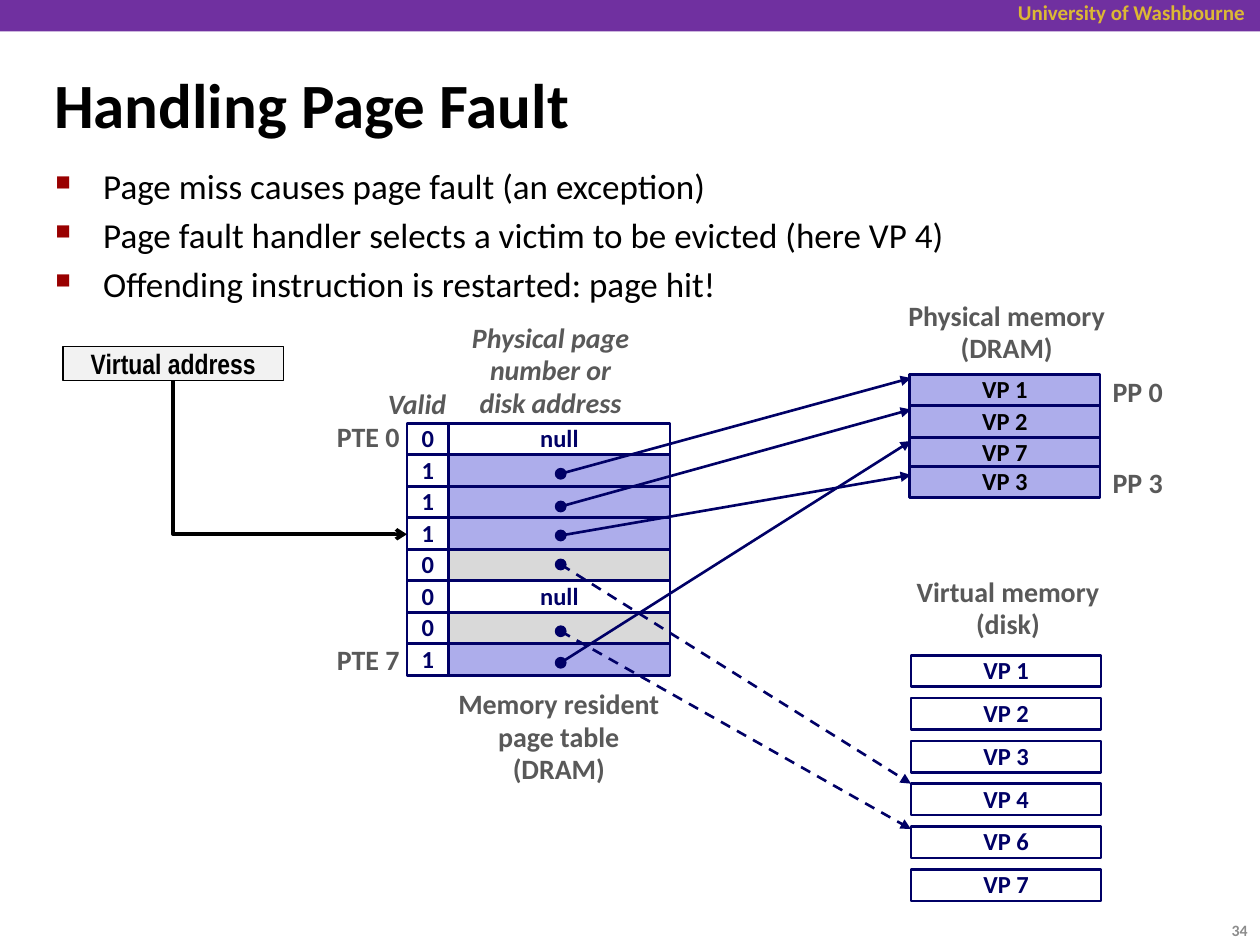
from lxml import etree
from pptx import Presentation
from pptx.dml.color import RGBColor
from pptx.enum.dml import MSO_LINE
from pptx.enum.shapes import MSO_CONNECTOR, MSO_SHAPE
from pptx.enum.text import MSO_ANCHOR, MSO_AUTO_SIZE, PP_ALIGN
from pptx.oxml.ns import qn
from pptx.util import Inches, Pt

NAVY, LILAC, GREY, WHITE, BLACK, LABEL = (
    "000066", "ADADEB", "D9D9D9", "FFFFFF", "000000", "595959")
CELL = {"size": 14, "color": NAVY, "bold": True}
CAPTION = {"size": 16, "color": LABEL, "bold": True}
ROW_H = 0.25


def rgb(value):
    return RGBColor.from_string(value)


def write(shape, lines, fmt, align=PP_ALIGN.CENTER, anchor=MSO_ANCHOR.MIDDLE,
          wrap=False, spacing=0.98):
    """Fill a shape with one paragraph per line, all in one format."""
    tf = shape.text_frame
    frame = {"auto_size": MSO_AUTO_SIZE.NONE, "word_wrap": wrap,
             "vertical_anchor": anchor}
    for name, value in frame.items():
        setattr(tf, name, value)
    font = {"name": "Calibri", **fmt}
    color, size = font.pop("color"), font.pop("size")
    for i, line in enumerate(lines):
        p = tf.paragraphs[0] if i == 0 else tf.add_paragraph()
        p.alignment, p.line_spacing = align, spacing
        r = p.add_run()
        r.text = line
        r.font.size, r.font.color.rgb = Pt(size), rgb(color)
        for name, value in font.items():
            setattr(r.font, name, value)
    return tf


def add_text(s, box, lines, fmt, **layout):
    return write(s.shapes.add_textbox(*map(Inches, box)), lines, fmt, **layout)


def add_box(s, box, fill, line=NAVY, width=1.5, kind=MSO_SHAPE.RECTANGLE):
    sp = s.shapes.add_shape(kind, *map(Inches, box))
    sp.shadow.inherit = False
    sp.fill.solid()
    sp.fill.fore_color.rgb = rgb(fill)
    if line:
        sp.line.color.rgb, sp.line.width = rgb(line), Pt(width)
    else:
        sp.line.fill.background()
    return sp


def add_arrow(s, ends, color=NAVY, width=1.5, dashed=False, head="triangle",
              kind=MSO_CONNECTOR.STRAIGHT):
    cx = s.shapes.add_connector(kind, *map(Inches, ends))
    cx.line.color.rgb, cx.line.width = rgb(color), Pt(width)
    if dashed:
        cx.line.dash_style = MSO_LINE.DASH
    etree.SubElement(cx.line._get_or_add_ln(), qn("a:tailEnd"), type=head)
    etree.SubElement(cx._element.spPr, qn("a:effectLst"))
    return cx


def add_header(s, box):
    left, top, width, height = box
    add_box(s, box, "7030A0", line=None)
    add_text(s, (left + width - 2.67, top - 0.05, 2.65, 0.3),
             ["University of Washbourne"],
             {"size": 12, "color": "DCB834", "bold": True},
             align=PP_ALIGN.RIGHT, anchor=MSO_ANCHOR.TOP, spacing=1)


def add_title(s, box, text):
    title = s.shapes.title
    title.left, title.top, title.width, title.height = map(Inches, box)
    write(title, [text], {"size": 36, "color": BLACK, "bold": True},
          align=PP_ALIGN.LEFT, wrap=True, spacing=1)


def add_bullets(s, box, lines):
    tf = add_text(s, box, lines, {"size": 20, "color": BLACK},
                  align=PP_ALIGN.LEFT, anchor=MSO_ANCHOR.TOP, wrap=True, spacing=1)
    for p in tf.paragraphs:
        p.space_before = Pt(4)
        pPr = p._p.get_or_add_pPr()
        pPr.set("marL", str(Inches(0.38)))
        pPr.set("indent", str(-Inches(0.38)))
        clr = etree.SubElement(pPr, qn("a:buClr"))
        etree.SubElement(clr, qn("a:srgbClr"), val="990000")
        etree.SubElement(pPr, qn("a:buSzPct"), val="60000")
        etree.SubElement(pPr, qn("a:buChar"), char="■")


def add_page_table(s, box):
    left, top, width, height = box
    valid_w = 0.33
    entries = [("0", WHITE), ("1", LILAC), ("1", LILAC), ("1", LILAC),
               ("0", GREY), ("0", WHITE), ("0", GREY), ("1", LILAC)]
    for i, (valid, fill) in enumerate(entries):
        y = top + i * ROW_H
        write(add_box(s, (left, y, valid_w, ROW_H), WHITE), [valid], CELL)
        entry = add_box(s, (left + valid_w, y, width - valid_w, ROW_H), fill)
        if fill == WHITE:
            write(entry, ["null"], CELL)
    # Headings, row labels and caption
    italic = {**CAPTION, "italic": True}
    add_text(s, (left - 0.25, top - 0.33, 0.75, 0.37), ["Valid"], italic,
             align=PP_ALIGN.LEFT, anchor=MSO_ANCHOR.TOP)
    add_text(s, (left + 0.41, top - 0.86, 1.46, 0.89),
             ["Physical page", "number or", "disk address"], italic)
    for label, y in (("PTE 0", top - 0.07), ("PTE 7", top + height - 0.3)):
        add_text(s, (left - 0.66, y, 0.7, 0.37), [label], CAPTION,
                 align=PP_ALIGN.RIGHT)
    add_text(s, (left + 0.28, top + height + 0.05, 1.85, 0.89),
             ["Memory resident", "page table", "(DRAM)"], CAPTION,
             anchor=MSO_ANCHOR.TOP)


def add_memory(s, box, heading, heading_gap, pages, tops, fill, color):
    """Draw a stack of pages under a two-line heading."""
    left, top, width = box
    add_text(s, (left - 0.1, top - heading_gap, width + 0.23, 0.63), heading,
             CAPTION, anchor=MSO_ANCHOR.TOP)
    for page, y in zip(pages, tops):
        write(add_box(s, (left, top + y, width, ROW_H), fill),
              [page], {**CELL, "color": color})


def add_pointers(s, x0, x1):
    # Start y, end y, dashed when the page is on disk
    pointers = [(3.76, 3, False), (4.02, 3.25, False), (4.25, 3.77, False),
                (4.48, 6.22, True), (5.01, 6.58, True), (5.26, 3.5, False)]
    for y0, y1, on_disk in pointers:
        add_arrow(s, (x0, y0, x1, y1), dashed=on_disk)
        add_box(s, (x0 - 0.04, y0 - 0.04, 0.08, 0.08), NAVY, width=1,
                kind=MSO_SHAPE.OVAL)


def add_virtual_address(s, box, target):
    left, top, width, height = box
    write(add_box(s, box, "F2F2F2", BLACK, 1), ["Virtual address"],
          {"size": 16, "color": BLACK, "bold": True, "name": "Arial Narrow"},
          spacing=1)
    # Arrow down, then right: a one-bend connector turned about its centre
    x0, y0 = left + width / 2, top + height
    x1, y1 = target
    cx, cy, half_w, half_h = (x0 + x1) / 2, (y0 + y1) / 2, (y1 - y0) / 2, (x1 - x0) / 2
    arrow = add_arrow(s, (cx - half_w, cy - half_h, cx + half_w, cy + half_h),
                      BLACK, 2, head="arrow", kind=MSO_CONNECTOR.ELBOW)
    spPr = arrow._element.spPr
    spPr.find(qn("a:prstGeom")).set("prst", "bentConnector2")
    xfrm = spPr.find(qn("a:xfrm"))
    xfrm.set("rot", str(270 * 60000))
    xfrm.set("flipH", "1")


def main():
    prs = Presentation()
    prs.slide_width, prs.slide_height = Inches(10), Inches(7.5)
    s = prs.slides.add_slide(prs.slide_layouts[5])
    add_header(s, (0, 0, 10, 0.25))
    add_title(s, (0.33, 0.39, 9.06, 0.86), "Handling Page Fault")
    add_bullets(s, (0.34, 1.26, 9.09, 1.2), [
        "Page miss causes page fault (an exception)",
        "Page fault handler selects a victim to be evicted (here VP 4)",
        "Offending instruction is restarted: page hit!"])
    add_page_table(s, (3.23, 3.36, 2.09, 8 * ROW_H))
    # Physical memory with its page numbers
    add_memory(s, (7.22, 2.97, 1.51), ["Physical memory", "(DRAM)"], 0.64,
               ["VP 1", "VP 2", "VP 7", "VP 3"], [0, 0.25, 0.5, 0.73], LILAC, BLACK)
    for label, y in (("PP 0", 2.93), ("PP 3", 3.65)):
        add_text(s, (8.73, y, 0.6, 0.37), [label], CAPTION)
    # Virtual memory
    disk_pages = [f"VP {n}" for n in (1, 2, 3, 4, 6, 7)]
    add_memory(s, (7.23, 5.2, 1.51), ["Virtual memory", "(disk)"], 0.68,
               disk_pages, [0.34 * i for i in range(6)], WHITE, NAVY)
    add_pointers(s, 4.45, 7.23)
    add_virtual_address(s, (0.5, 2.75, 1.75, 0.27), (3.23, 4.24))
    # Page number
    add_text(s, (9.33, 7.18, 0.67, 0.4), ["34"],
             {"size": 9, "color": "8C8C8C", "bold": True}, align=PP_ALIGN.RIGHT, spacing=1)
    prs.save("out.pptx")


if __name__ == "__main__":
    main()
